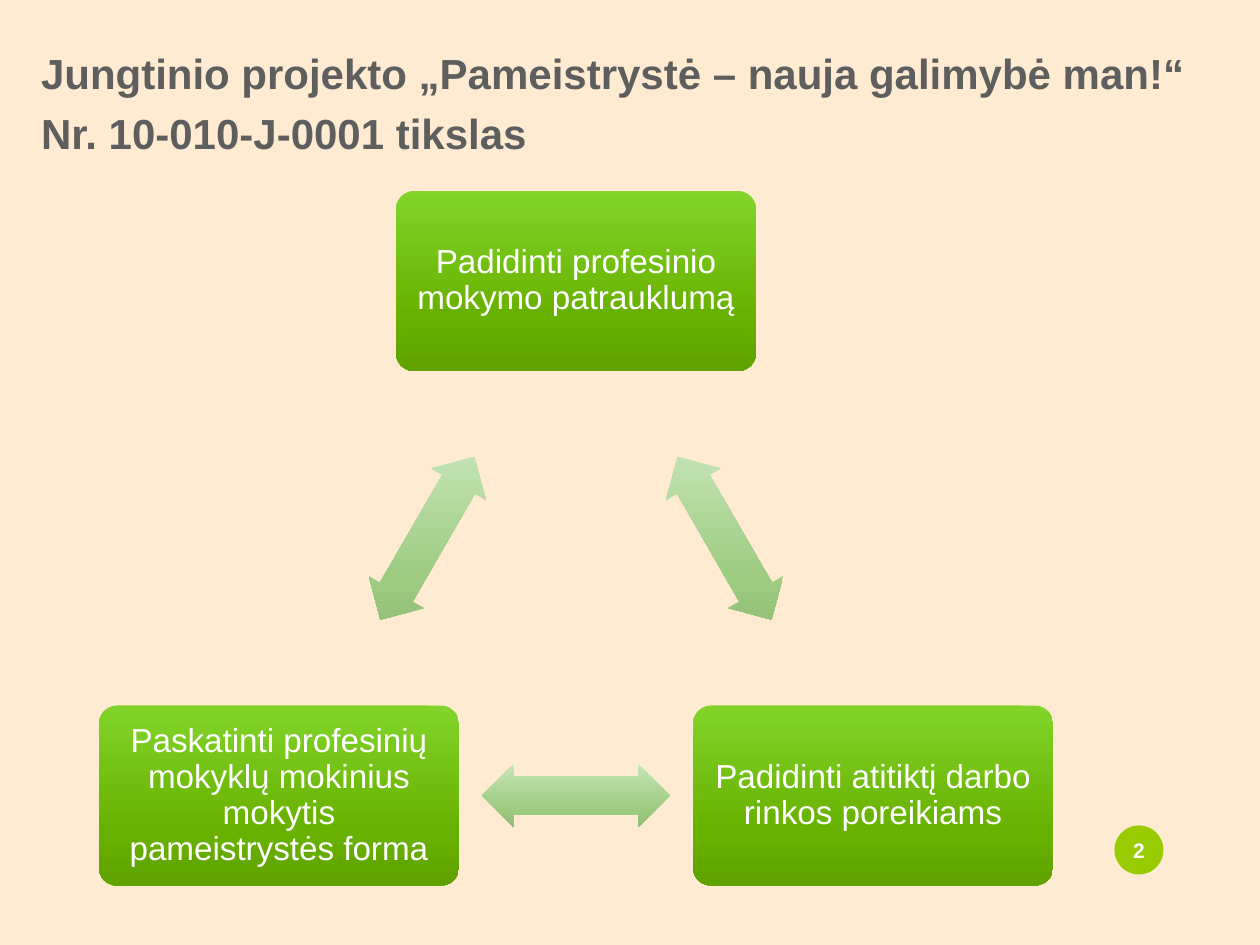
from copy import deepcopy
from itertools import pairwise
from math import atan2, cos, degrees, radians, sin

from pptx import Presentation
from pptx.dml.color import RGBColor
from pptx.enum.shapes import MSO_SHAPE
from pptx.enum.text import MSO_ANCHOR, MSO_AUTO_SIZE, PP_ALIGN
from pptx.oxml.ns import qn
from pptx.util import Pt

SCALE = 914400 / 126
COLORS = {
    "background": "FEEBD1",
    "title": "5E5E5E",
    "badge": "99CC00",
    "light": "FFFFFF",
}
GRADIENTS = {
    "goal": [(0, "82D42A"), (0.69, "68B100"), (1, "60A200")],
    "arrow": [(0, "C7E5B7"), (0.69, "9ECC83"), (1, "90BE75")],
}
TITLE = "Jungtinio projekto „Pameistrystė – nauja galimybė man!“ Nr. 10-010-J-0001 tikslas"
GOALS = [
    "Padidinti profesinio mokymo\u00a0patrauklumą",
    "Padidinti atitiktį darbo rinkos poreikiams",
    "Paskatinti\u00a0profesinių mokyklų mokinius mokytis pameistrystės forma",
]
CYCLE_X, CYCLE_Y, CYCLE_RADIUS = 576, 624, 343
GOAL_WIDTH, GOAL_HEIGHT = 360, 180
ARROW_WIDTH, ARROW_HEIGHT = 188, 63


def px(value):
    return round(value * SCALE)


def set_values(target, values):
    for name, value in values.items():
        setattr(target, name, value)


class SlideBuilder:
    font_name = "Arial"

    def __init__(self, page):
        self.page = page

    def background(self, color):
        fill = self.page.background.fill
        fill.solid()
        fill.fore_color.rgb = RGBColor.from_string(COLORS[color])

    def label(self, box, text, color, size, bold=False, inset=0,
              anchor=MSO_ANCHOR.MIDDLE, **paragraph_format):
        frame = box.text_frame
        frame.text = text
        sides = ("margin_left", "margin_top", "margin_right", "margin_bottom")
        set_values(frame, {
            "word_wrap": True,
            "auto_size": MSO_AUTO_SIZE.NONE,
            "vertical_anchor": anchor,
            **dict.fromkeys(sides, px(inset)),
        })
        para = frame.paragraphs[0]
        set_values(para, {"alignment": PP_ALIGN.CENTER, **paragraph_format})
        span = para.runs[0]
        set_values(span.font, {"name": self.font_name, "size": Pt(size), "bold": bold})
        span.font.color.rgb = RGBColor.from_string(COLORS[color])

    def title(self, text, left, top, width, height):
        box = self.page.shapes.title
        set_values(box, {"left": px(left), "top": px(top),
                         "width": px(width), "height": px(height)})
        self.label(box, text, "title", 24, bold=True, anchor=MSO_ANCHOR.TOP,
                   alignment=PP_ALIGN.LEFT, line_spacing=1.2, space_before=Pt(0))

    def shape(self, kind, center_x, center_y, width, height, adjustments=()):
        box = self.page.shapes.add_shape(
            kind, px(center_x - width / 2), px(center_y - height / 2), px(width), px(height))
        box.shadow.inherit = False
        box.line.fill.background()
        for index, value in enumerate(adjustments):
            box.adjustments[index] = value
        return box

    def gradient(self, box, stops):
        box.fill.gradient()
        box.fill.gradient_angle = 270
        gradient = box._element.spPr.find(qn("a:gradFill"))
        gradient.set("rotWithShape", "0")
        stop_list = gradient.find(qn("a:gsLst"))
        stop_list.append(deepcopy(stop_list[-1]))
        for stop, (position, color) in zip(box.fill.gradient_stops, stops):
            stop.position = position
            stop.color.rgb = RGBColor.from_string(color)

    def goal(self, text, center):
        box = self.shape(MSO_SHAPE.ROUNDED_RECTANGLE, *center, GOAL_WIDTH, GOAL_HEIGHT, [0.1])
        self.gradient(box, GRADIENTS["goal"])
        self.label(box, text, "light", 19, inset=15, line_spacing=0.9)

    def arrow(self, start, end):
        middle = [(a + b) / 2 for a, b in zip(start, end)]
        box = self.shape(MSO_SHAPE.LEFT_RIGHT_ARROW, *middle,
                         ARROW_WIDTH, ARROW_HEIGHT, [0.6, 0.5])
        box.rotation = round(degrees(atan2(end[1] - start[1], end[0] - start[0]))) % 360
        self.gradient(box, GRADIENTS["arrow"])

    def badge(self, text, center_x, center_y, size):
        box = self.shape(MSO_SHAPE.OVAL, center_x, center_y, size, size)
        box.fill.solid()
        box.fill.fore_color.rgb = RGBColor.from_string(COLORS["badge"])
        self.label(box, text, "light", 12, bold=True)


def main():
    deck = Presentation()
    set_values(deck, {"slide_width": px(1260), "slide_height": px(945)})
    builder = SlideBuilder(deck.slides.add_slide(deck.slide_layouts[5]))
    builder.background("background")
    builder.badge("2", 1139, 850, 49)
    builder.title(TITLE, 41, 37, 1202, 116)
    angles = [radians(-90 + 360 / len(GOALS) * index) for index in range(len(GOALS))]
    centers = [(CYCLE_X + CYCLE_RADIUS * cos(angle), CYCLE_Y + CYCLE_RADIUS * sin(angle))
               for angle in angles]
    for text, center in zip(GOALS, centers):
        builder.goal(text, center)
    for start, end in pairwise(centers + centers[:1]):
        builder.arrow(start, end)
    deck.save("out.pptx")


if __name__ == "__main__":
    main()
